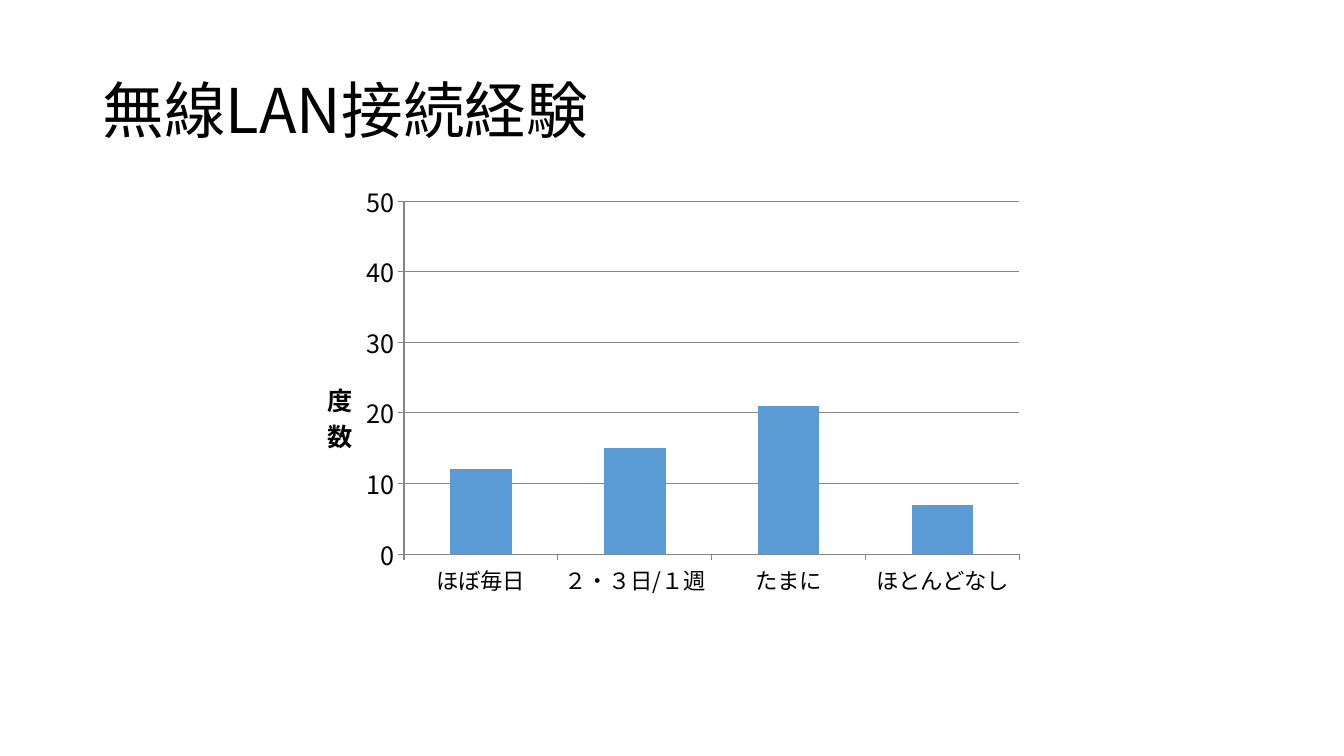
"""Build a slide with a column chart of wireless LAN use."""
from lxml import etree
from pptx import Presentation
from pptx.chart.data import CategoryChartData
from pptx.dml.color import RGBColor
from pptx.enum.chart import XL_CHART_TYPE, XL_TICK_MARK
from pptx.enum.text import MSO_ANCHOR, PP_ALIGN
from pptx.oxml.ns import qn
from pptx.util import Pt

COLUMN = XL_CHART_TYPE.COLUMN_CLUSTERED
OUT, NONE = XL_TICK_MARK.OUTSIDE, XL_TICK_MARK.NONE
MIDDLE, LEFT = MSO_ANCHOR.MIDDLE, PP_ALIGN.LEFT

TITLE = "無線LAN接続経験"
COUNT = "度数"
SERIES = "Series 1"
USE = {"ほぼ毎日": 12, "２・３日/１週": 15, "たまに": 21, "ほとんどなし": 7}

THEME = {
    "font": "Noto Sans CJK JP",
    "text": RGBColor(0x00, 0x00, 0x00),
    "bar": RGBColor(0x5B, 0x9B, 0xD5),
    "line": RGBColor(0x86, 0x86, 0x86),
    "title": 44, "base": 10, "label": 16, "scale": 18,
}
PAGE = (960, 540)
TITLE_BOX = (66, 28.75, 828, 104.4)
CHART_BOX = (215.3, 123.8, 523.4, 331.9)
PLOT = {"x": 0.14, "y": 0.06, "w": 0.84, "h": 0.76}
COUNT_AT = {"x": 0.03, "y": 0.43}
SCALE = {"minimum_scale": 0, "maximum_scale": 50, "major_unit": 10,
         "has_major_gridlines": True}
TICKS = {"major_tick_mark": OUT, "minor_tick_mark": NONE}


def apply(item, values):
    """Set each named attribute of an item."""
    for name, value in values.items():
        setattr(item, name, value)


def style(font, size, bold=False):
    """Give a font the theme face and colour."""
    apply(font, {"name": THEME["font"], "size": Pt(THEME[size]), "bold": bold})
    font.color.rgb = THEME["text"]
    latin = font._element.find(qn("a:latin")) if hasattr(font, "_element") else font._rPr.find(qn("a:latin"))
    east = etree.Element(qn("a:ea"), typeface=THEME["font"])
    latin.addnext(east)


def rule(line):
    """Draw a thin grey line."""
    line.width = Pt(0.75)
    line.color.rgb = THEME["line"]


def place(parent, index, spots, inner=False):
    """Fix a chart part at fractions of the chart area."""
    for old in parent.findall(qn("c:layout")):
        parent.remove(old)
    layout = etree.Element(qn("c:layout"))
    manual = etree.SubElement(layout, qn("c:manualLayout"))
    if inner:
        etree.SubElement(manual, qn("c:layoutTarget"), val="inner")
    for key in ("x", "y"):
        etree.SubElement(manual, qn(f"c:{key}Mode"), val="edge")
    for key, value in spots.items():
        etree.SubElement(manual, qn(f"c:{key}"), val=str(value))
    parent.insert(index, layout)


def add_title(slide):
    """Place and format the slide title."""
    title = slide.shapes.title
    apply(title, dict(zip(("left", "top", "width", "height"), map(Pt, TITLE_BOX))))
    frame = title.text_frame
    apply(frame, {"text": TITLE, "vertical_anchor": MIDDLE, "word_wrap": True})
    line = frame.paragraphs[0]
    apply(line, {"alignment": LEFT, "line_spacing": 0.9})
    style(line.runs[0].font, "title")


def add_chart(slide):
    """Add the column chart with its axes."""
    data = CategoryChartData()
    data.categories = list(USE)
    data.add_series(SERIES, list(USE.values()))
    chart = slide.shapes.add_chart(COLUMN, *map(Pt, CHART_BOX), data).chart
    apply(chart, {"has_legend": False, "has_title": False})
    style(chart.font, "base")

    plot = chart.plots[0]
    apply(plot, {"gap_width": 150, "vary_by_categories": False})
    fill = plot.series[0].format.fill
    fill.solid()
    fill.fore_color.rgb = THEME["bar"]

    for axis, size in ((chart.category_axis, "label"), (chart.value_axis, "scale")):
        apply(axis, TICKS)
        style(axis.tick_labels.font, size)
        rule(axis.format.line)
    apply(chart.value_axis, SCALE)
    rule(chart.value_axis.major_gridlines.format.line)

    name = chart.value_axis.axis_title
    frame = name.text_frame
    frame.text = COUNT
    style(frame.paragraphs[0].runs[0].font, "scale", True)
    body = frame._txBody.find(qn("a:bodyPr"))
    for key, value in {"rot": "0", "vert": "wordArtVertRtl"}.items():
        body.set(key, value)
    place(name._element, 1, COUNT_AT)
    place(chart._chartSpace.chart.plotArea, 0, PLOT, True)


def main():
    """Create and save the slide."""
    deck = Presentation()
    deck.slide_width, deck.slide_height = map(Pt, PAGE)
    slide = deck.slides.add_slide(deck.slide_layouts[5])
    add_title(slide)
    add_chart(slide)
    deck.save("out.pptx")


if __name__ == "__main__":
    main()
